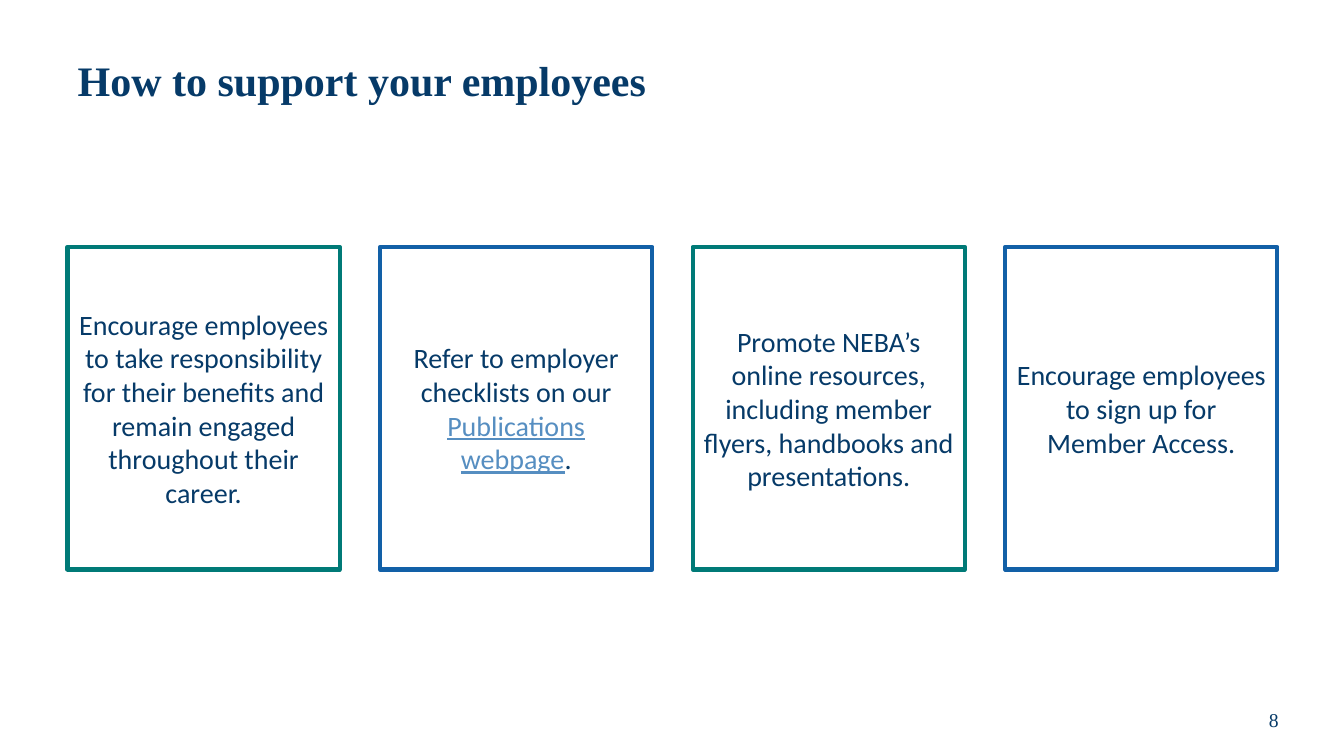
from lxml import etree
from pptx import Presentation
from pptx.dml.color import RGBColor
from pptx.enum.shapes import MSO_SHAPE
from pptx.enum.text import MSO_ANCHOR, PP_ALIGN
from pptx.oxml.ns import qn
from pptx.util import Inches, Pt

RECTANGLE = MSO_SHAPE.RECTANGLE
MIDDLE = MSO_ANCHOR.MIDDLE
LEFT, CENTER = PP_ALIGN.LEFT, PP_ALIGN.CENTER
NAVY, BLUE, TEAL, LINK = "063A68", "1260A7", "007A77", "568EC1"
SERIF, SANS = "Times New Roman", "Calibri"

CARDS = [
    [("Encourage employees to take responsibility for their benefits "
      "and remain engaged throughout their career.", {})],
    [("Refer to employer checklists on our ", {}),
     ("Publications webpage", {"color": LINK, "underline": True}),
     (".", {})],
    [("Promote NEBA’s online resources, including member flyers, "
      "handbooks and presentations.", {})],
    [("Encourage employees to sign up for Member Access.", {})],
]


def rgb(color):
    """Return the colour for a hex string."""
    return RGBColor.from_string(color)


def add_run(p, text, size=20, font=SANS, color=NAVY, bold=False, underline=False):
    """Add a formatted run of text to a paragraph."""
    r = p.add_run()
    r.text = text
    r.font.size = Pt(size)
    r.font.name = font
    r.font.color.rgb = rgb(color)
    r.font.bold = bold
    r.font.underline = underline


def first_paragraph(sp, align):
    """Set up a wrapped, vertically centred text frame and return its paragraph."""
    tf = sp.text_frame
    tf.word_wrap = True
    tf.vertical_anchor = MIDDLE
    p = tf.paragraphs[0]
    p.alignment = align
    return p


def add_title(s, text):
    """Place and format the slide title."""
    sp = s.shapes.title
    sp.left, sp.top = Inches(0.67), Inches(0.25)
    sp.width, sp.height = Inches(12), Inches(1.15)
    p = first_paragraph(sp, LEFT)
    p.line_spacing = 0.9
    add_run(p, text, size=30, font=SERIF, bold=True)


def add_card(s, left, runs, color):
    """Add an outlined card with centred text."""
    sp = s.shapes.add_shape(RECTANGLE, Inches(left), Inches(2.45),
                            Inches(2.7), Inches(3.2))
    sp.shadow.inherit = False
    sp.fill.background()
    sp.line.color.rgb = rgb(color)
    sp.line.width = Pt(3)
    etree.SubElement(sp.line._get_or_add_ln(), qn("a:round"))
    tf = sp.text_frame
    tf.margin_left = tf.margin_right = Inches(0.1)
    tf.margin_top = tf.margin_bottom = Inches(0.1)
    p = first_paragraph(sp, CENTER)
    for text, style in runs:
        add_run(p, text, **style)


def add_page_number(s, number):
    """Add the page number at the bottom right."""
    sp = s.shapes.add_textbox(Inches(12.05), Inches(6.89), Inches(1.17), Inches(0.5))
    add_run(first_paragraph(sp, CENTER), number, size=14, font=SERIF)


def main():
    """Build and save the slide."""
    prs = Presentation()
    prs.slide_width, prs.slide_height = Inches(13.33), Inches(7.5)
    s = prs.slides.add_slide(prs.slide_layouts[5])
    add_title(s, "How to support your employees")
    for i, runs in enumerate(CARDS):
        add_card(s, 0.67 + 3.1 * i, runs, BLUE if i % 2 else TEAL)
    add_page_number(s, "8")
    prs.save("out.pptx")


if __name__ == "__main__":
    main()
